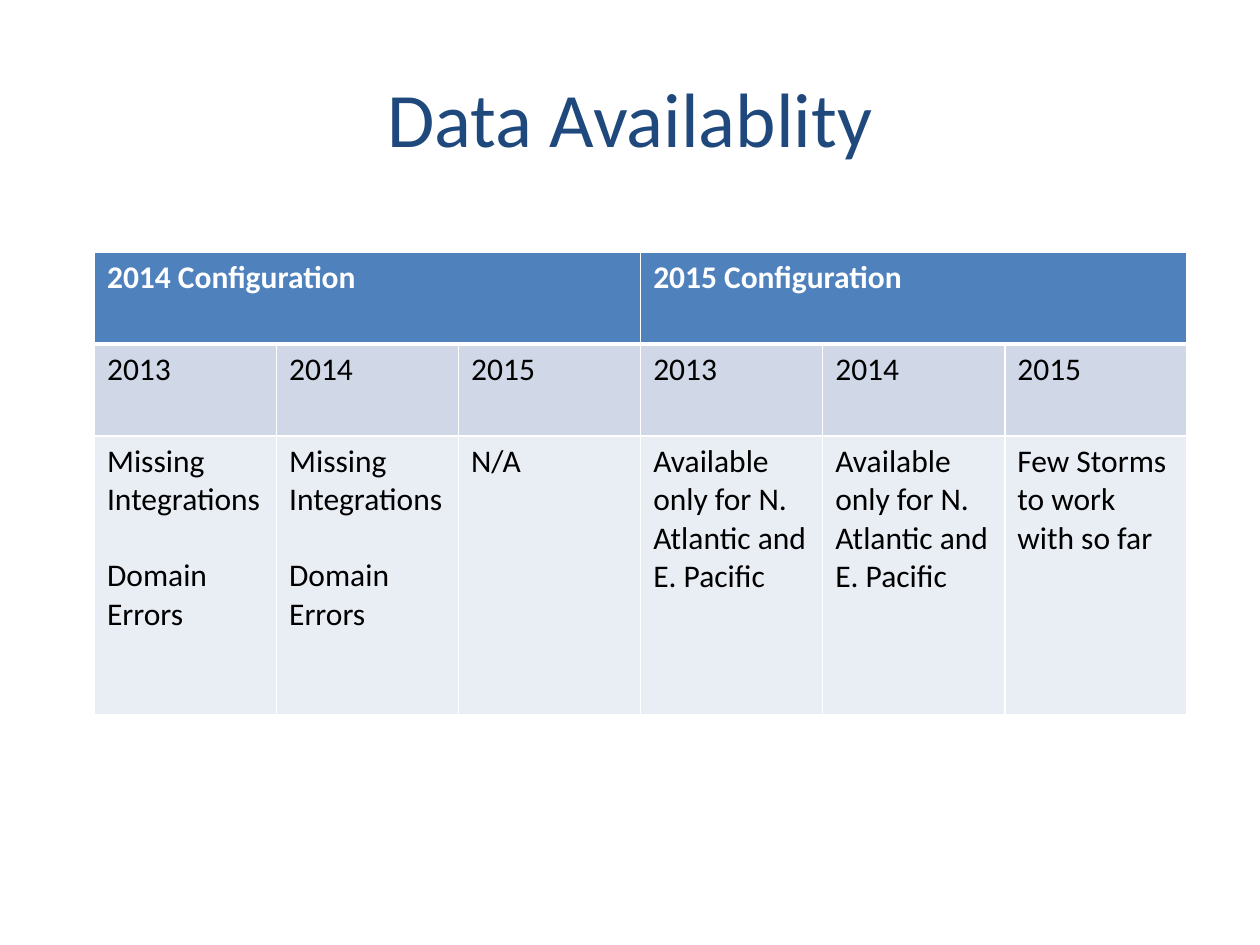
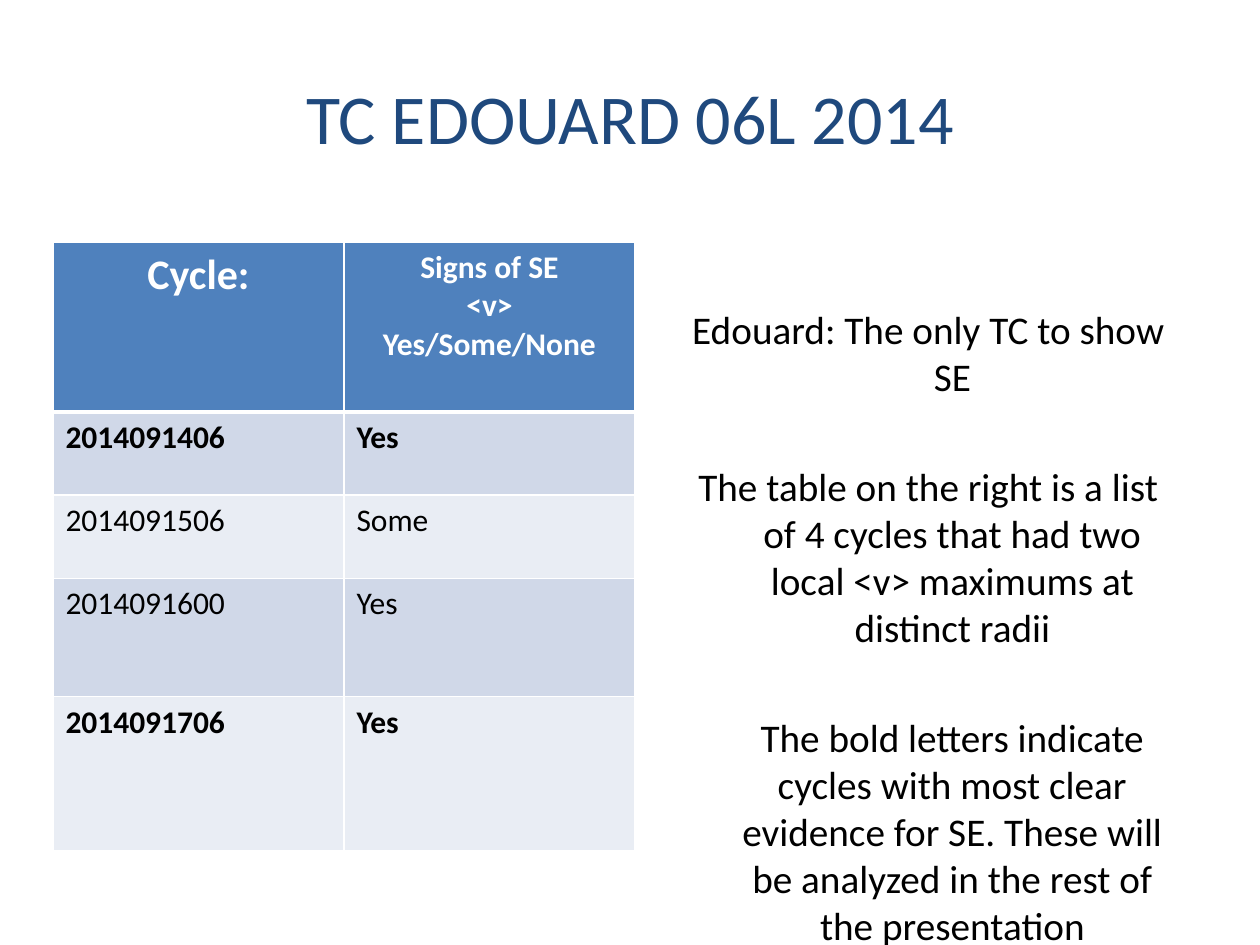
from dataclasses import dataclass

from lxml import etree
from pptx import Presentation
from pptx.dml.color import RGBColor as RGB
from pptx.enum.text import MSO_ANCHOR as ANCHOR, PP_ALIGN as ALIGN
from pptx.oxml.ns import qn
from pptx.util import Inches, Pt


@dataclass(frozen=True)
class Theme:
    font: str = "Calibri"
    title: str = "1F497D"
    text: str = "000000"
    header: str = "4F81BD"
    header_text: str = "FFFFFF"
    border: str = "FFFFFF"
    bands: tuple = ("D0D8E8", "E9EDF4")
    title_size: float = 44
    long_title_size: float = 40
    body_size: float = 22.4
    cell_size: float = 18
    big_cell_size: float = 24
    thin: float = 1
    thick: float = 3
    cell_gap: float = 21.6


class Deck:
    def __init__(self, theme):
        self.theme = theme
        self.prs = Presentation()
        self.prs.slide_width = Inches(10)
        self.prs.slide_height = Inches(7.5)
        self.s = None

    def run(self, p, text, size, color, bold=False):
        r = p.add_run()
        r.text = text
        r.font.name = self.theme.font
        r.font.size = Pt(size)
        r.font.bold = bold
        r.font.color.rgb = RGB.from_string(color)

    def slide(self, title, size):
        self.s = self.prs.slides.add_slide(self.prs.slide_layouts[5])
        sp = self.s.shapes.title
        sp.left, sp.top = Inches(0.5), Inches(0.3)
        sp.width, sp.height = Inches(9), Inches(1.25)
        tf = sp.text_frame
        tf.vertical_anchor = ANCHOR.MIDDLE
        p = tf.paragraphs[0]
        p.alignment = ALIGN.CENTER
        self.run(p, title, size, self.theme.title)

    def body(self, left, top, width, height, paragraphs, top_margin, gap):
        sp = self.s.shapes.add_textbox(Inches(left), Inches(top), Inches(width), Inches(height))
        tf = sp.text_frame
        tf.word_wrap = True
        tf.margin_top = Inches(top_margin)
        for i, (text, first_indent) in enumerate(paragraphs):
            p = tf.add_paragraph() if i else tf.paragraphs[0]
            p.alignment = ALIGN.CENTER
            p.space_before = Pt(gap if i else 0)
            pPr = p._p.get_or_add_pPr()
            pPr.set("marL", str(Inches(0.38)))
            pPr.set("indent", str(Inches(first_indent)))
            self.run(p, text, self.theme.body_size, self.theme.text)

    def border(self, cell, side, width):
        tcPr = cell._tc.get_or_add_tcPr()
        ln = etree.SubElement(tcPr, qn(f"a:ln{side}"), w=str(Pt(width)))
        fill = etree.SubElement(ln, qn("a:solidFill"))
        etree.SubElement(fill, qn("a:srgbClr"), val=self.theme.border)

    def table(self, left, top, width, heights, rows, bold_rows=()):
        th = self.theme
        cols = len(rows[0])
        frame = self.s.shapes.add_table(len(rows), cols, Inches(left), Inches(top),
                                        Inches(width), Inches(sum(heights)))
        table = frame.table
        for column in table.columns:
            column.width = Inches(width / cols)
        for i, (height, texts) in enumerate(zip(heights, rows)):
            table.rows[i].height = Inches(height)
            for j, text in enumerate(texts):
                cell = table.cell(i, j)
                edges = {"L": th.thin, "R": th.thin,
                         "T": th.thick if i == 1 else th.thin,
                         "B": th.thick if i == 0 else th.thin}
                for side, weight in edges.items():
                    self.border(cell, side, weight)
                cell.fill.solid()
                fill = th.bands[(i - 1) % 2] if i else th.header
                cell.fill.fore_color.rgb = RGB.from_string(fill)
                if text:
                    self.cell_text(cell, text, i == 0, i == 0 or i in bold_rows)
        return table

    def cell_text(self, cell, text, header, bold):
        th = self.theme
        tf = cell.text_frame
        for k, line in enumerate(text.split("\n")):
            p = tf.add_paragraph() if k else tf.paragraphs[0]
            self.run(p, line, th.cell_size, th.header_text if header else th.text, bold)


def data_availability(deck):
    deck.slide("Data Availablity", deck.theme.title_size)
    years = ["2013", "2014", "2015"]
    missing = "Missing Integrations\nDomain Errors"
    basins = "Available only for N. Atlantic and E. Pacific"
    rows = [
        ["2014 Configuration", "", "", "2015 Configuration", "", ""],
        years * 2,
        [missing, missing, "N/A", basins, basins, "Few Storms to work with so far"],
    ]
    table = deck.table(0.75, 2, 8.67, [0.73, 0.73, 2.21], rows)
    for first in (0, 3):
        table.cell(0, first).merge(table.cell(0, first + 2))
    for column in (0, 1):
        errors = table.cell(2, column).text_frame.paragraphs[1]
        errors.space_before = Pt(deck.theme.cell_gap)


def edouard_cycles(deck):
    deck.slide("TC EDOUARD 06L 2014", deck.theme.long_title_size)
    deck.body(5.33, 1.92, 4.08, 4.95, [
        ("Edouard: The only TC to show SE", -0.38),
        ("The table on the right is a list of 4 cycles that had two local <v> maximums "
         "at distinct radii", -0.38),
        ("The bold letters indicate cycles with most clear evidence for SE. These will be "
         "analyzed in the rest of the presentation", 0),
    ], top_margin=0.5, gap=36)
    rows = [
        ["Cycle:", "Signs of SE\n<v>\nYes/Some/None"],
        ["2014091406", "Yes"],
        ["2014091506", "Some"],
        ["2014091600", "Yes"],
        ["2014091706", "Yes"],
    ]
    table = deck.table(0.42, 1.92, 4.62, [1.35, 0.66, 0.66, 0.94, 1.22], rows, bold_rows=(1, 4))
    for column in (0, 1):
        for p in table.cell(0, column).text_frame.paragraphs:
            p.alignment = ALIGN.CENTER
    cycle = table.cell(0, 0)
    cycle.margin_left = cycle.margin_right = Inches(0.07)
    cycle.margin_top = cycle.margin_bottom = 0
    p = cycle.text_frame.paragraphs[0]
    p.line_spacing = 1.15
    p.runs[0].font.size = Pt(deck.theme.big_cell_size)


def main():
    deck = Deck(Theme())
    data_availability(deck)
    edouard_cycles(deck)
    deck.prs.save("out.pptx")


if __name__ == "__main__":
    main()
